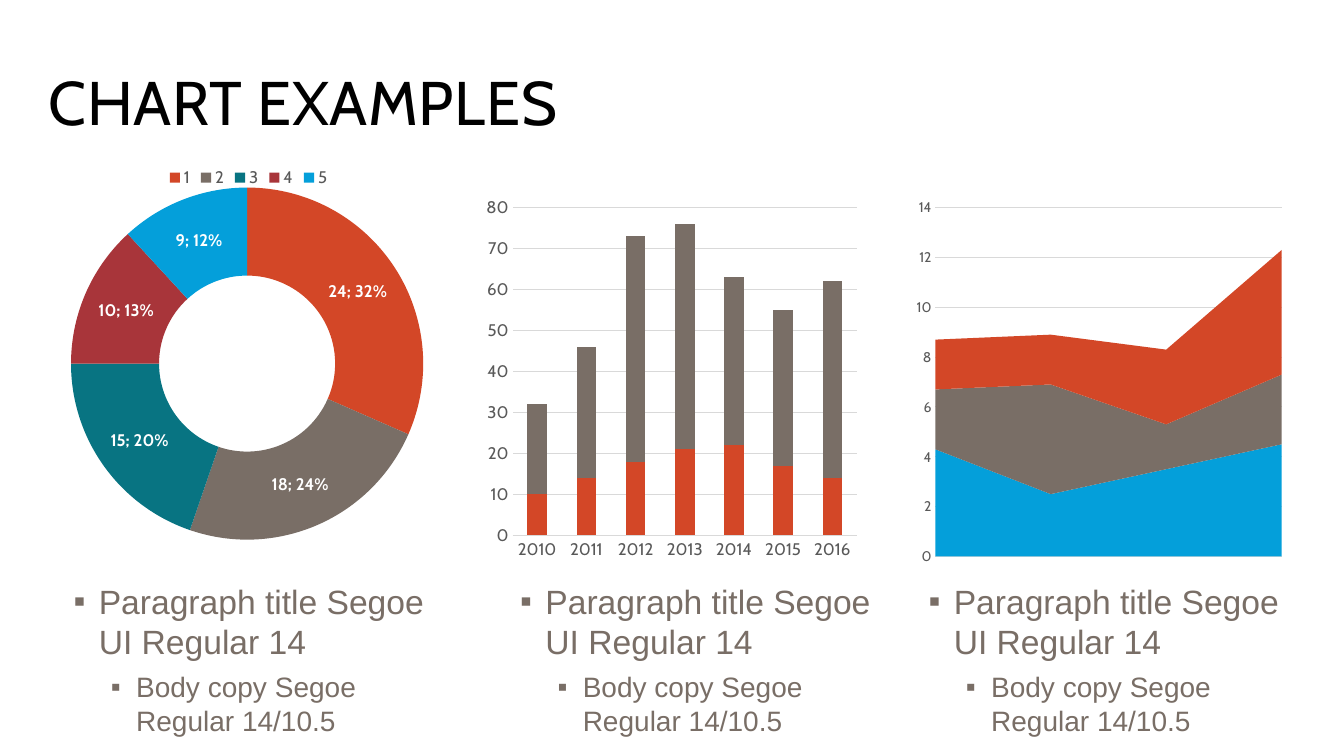
import pptx
import pptx.chart.data
import pptx.dml.color
import pptx.enum.chart
import pptx.enum.text
import pptx.oxml
import pptx.oxml.ns
import pptx.util
from pptx.util import Inches

COLORS = {"orange": "D34727", "taupe": "796E66", "teal": "087482", "red": "A8353A", "blue": "049FDA",
          "label": "595959", "grid": "D9D9D9", "black": "000000", "white": "FFFFFF"}
TITLE = "CHART EXAMPLES"
# Paragraphs: text, level, size, left indent
BULLETS = [("Paragraph title Segoe UI Regular 14", 1, 24, 0.88),
           ("Body copy Segoe Regular 14/10.5", 2, 20, 1.25)]
BODY_COLUMNS = [(0, 4.56), (4.43, 4.33), (8.48, 4.56)]  # left, width
CHARTS = {
    "doughnut": {"at": (0.5, 1.55, 3.93, 4.14), "plot": (0.052, 0.042, 0.889, 0.91),
                 "categories": ["1", "2", "3", "4", "5"],
                 "series": [("Series 1", [24, 18, 15, 10, 9])],
                 "colors": ["orange", "taupe", "teal", "red", "blue"]},
    "column_stacked": {"at": (4.71, 1.82, 3.94, 3.86), "plot": (0.095, 0.062, 0.867, 0.843),
                       "categories": ["2010", "2011", "2012", "2013", "2014", "2015", "2016"],
                       "series": [("Series 1", [10, 14, 18, 21, 22, 17, 14]),
                                  ("Series 2", [22, 32, 55, 55, 41, 38, 48])],
                       "colors": ["orange", "taupe"], "scale": (80, 10), "axis_size": 12},
    "area_stacked": {"at": (8.9, 1.82, 3.96, 3.86), "plot": (0.095, 0.062, 0.868, 0.897),
                     "categories": ["1", "2", "3", "4"],
                     "series": [("Series 1", [4.3, 2.5, 3.5, 4.5]),
                                ("Series 2", [2.4, 4.4, 1.8, 2.8]),
                                ("Series 3", [2, 2, 3, 5])],
                     "colors": ["blue", "taupe", "orange"], "scale": (14, 2), "axis_size": 10},
}


def rgb(name):
    return pptx.dml.color.RGBColor.from_string(COLORS[name])


def style_font(font, face, size, color, bold=False):
    font.name, font.size, font.bold = face, pptx.util.Pt(size), bold
    font.color.rgb = rgb(color)


def fill_with(part, color):
    part.format.fill.solid()
    part.format.fill.fore_color.rgb = rgb(color)


def place(shape, left, top, width, height):
    shape.left, shape.top = Inches(left), Inches(top)
    shape.width, shape.height = Inches(width), Inches(height)


def set_plot_area(chart, fractions):
    """Fix the inner plot area as fractions of the chart frame."""
    sizes = "".join(f'<c:{key} val="{value}"/>' for key, value in zip("xywh", fractions))
    layout = pptx.oxml.parse_xml(
        f'<c:layout {pptx.oxml.ns.nsdecls("c")}><c:manualLayout><c:layoutTarget val="inner"/>'
        f'<c:xMode val="edge"/><c:yMode val="edge"/>{sizes}</c:manualLayout></c:layout>')
    plot_area = chart.plots[0]._element.getparent()
    for old in plot_area.findall(pptx.oxml.ns.qn("c:layout")):
        plot_area.remove(old)
    plot_area.insert(0, layout)


def style_line(line, color):
    line.color.rgb = rgb(color)
    line.width = pptx.util.Pt(0.75)


def style_axes(chart, scale, size):
    values, categories = chart.value_axis, chart.category_axis
    values.minimum_scale = 0
    values.maximum_scale, values.major_unit = scale
    values.has_major_gridlines = True
    style_line(values.major_gridlines.format.line, "grid")
    values.format.line.fill.background()
    style_line(categories.format.line, "grid")
    for axis in (values, categories):
        axis.major_tick_mark = pptx.enum.chart.XL_TICK_MARK.NONE
        style_font(axis.tick_labels.font, "Cabin", size, "label")


def add_chart(page, kind, content):
    data = pptx.chart.data.CategoryChartData()
    data.categories = content["categories"]
    for name, values in content["series"]:
        data.add_series(name, values)
    chart_type = getattr(pptx.enum.chart.XL_CHART_TYPE, kind.upper())
    frame = page.shapes.add_chart(chart_type, *map(Inches, content["at"]), data)
    chart = frame.chart
    chart.has_title = chart.has_legend = False
    style_font(chart.font, "Cabin", 10, "black")
    set_plot_area(chart, content["plot"])
    plot = chart.plots[0]
    plot.vary_by_categories = kind == "doughnut"
    parts = plot.series
    if kind == "doughnut":
        parts = [plot.series[0].points[i] for i in range(len(content["categories"]))]
    for part, color in zip(parts, content["colors"]):
        fill_with(part, color)
    if "scale" in content:
        style_axes(chart, content["scale"], content["axis_size"])
    return chart


def add_bullets(box):
    frame = box.text_frame
    frame.word_wrap = True
    frame.auto_size = pptx.enum.text.MSO_AUTO_SIZE.NONE
    frame.vertical_anchor = pptx.enum.text.MSO_ANCHOR.TOP
    frame.text = "\n".join(text for text, *_ in BULLETS)
    for para, (_, level, size, indent) in zip(frame.paragraphs, BULLETS):
        para.level = level
        para.space_before, para.space_after = pptx.util.Pt(0), pptx.util.Pt(6)
        style_font(para.runs[0].font, "Arial", size, "taupe")
        props = para._p.get_or_add_pPr()
        props.set("marL", str(Inches(indent)))
        props.set("indent", str(Inches(-0.25)))
        props.append(pptx.oxml.parse_xml(f'<a:buChar {pptx.oxml.ns.nsdecls("a")} char="▪"/>'))


def main():
    deck = pptx.Presentation()
    deck.slide_width, deck.slide_height = Inches(13.33), Inches(7.5)
    page = deck.slides.add_slide(deck.slide_layouts.get_by_name("Comparison"))

    # Title
    title = page.shapes.title
    place(title, 0.38, 0.4, 11.5, 1.03)
    title.text_frame.text = TITLE
    title.text_frame.vertical_anchor = pptx.enum.text.MSO_ANCHOR.BOTTOM
    title.text_frame.auto_size = pptx.enum.text.MSO_AUTO_SIZE.NONE
    para = title.text_frame.paragraphs[0]
    para.alignment = pptx.enum.text.PP_ALIGN.LEFT
    para.line_spacing = 0.9
    style_font(para.runs[0].font, "Cabin", 44, "black")
    para.runs[0].font._element.set("spc", "50")

    # Charts
    charts = {kind: add_chart(page, kind, content) for kind, content in CHARTS.items()}

    doughnut = charts["doughnut"]
    doughnut.has_legend = True
    doughnut.legend.position = pptx.enum.chart.XL_LEGEND_POSITION.TOP
    doughnut.legend.include_in_layout = False
    style_font(doughnut.legend.font, "Cabin", 12, "label")
    labels = doughnut.plots[0].series[0].data_labels
    labels.show_value = labels.show_percentage = True
    style_font(labels.font, "Cabin", 12, "white", bold=True)

    columns = charts["column_stacked"].plots[0]
    columns.gap_width, columns.overlap = 150, 100
    charts["area_stacked"].category_axis.visible = False

    # Bulleted text under each chart
    bodies = [box for box in page.placeholders if box.placeholder_format.idx in (1, 2, 3, 4)]
    for box, (left, width) in zip(bodies, BODY_COLUMNS):
        place(box, left, 5.71, width, 0.52)
        add_bullets(box)
    for unused in list(page.placeholders)[1 + len(BODY_COLUMNS):]:
        unused._element.getparent().remove(unused._element)

    deck.save("out.pptx")


if __name__ == "__main__":
    main()
